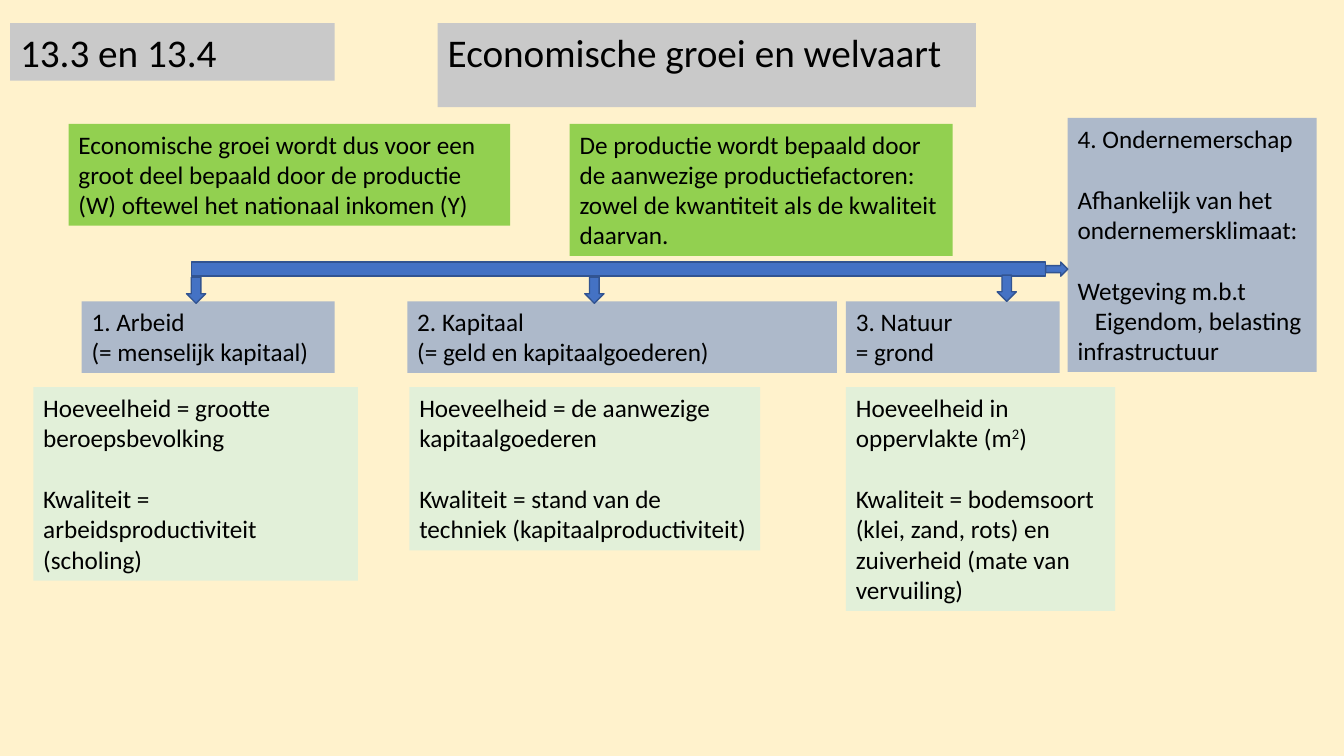
from pptx import Presentation
from pptx import util as u
from pptx.dml.color import RGBColor
from pptx.enum import shapes, text

BODY_SIZE, HEADING_SIZE = 18, 28
LINE_GAP = u.Pt(22)
INDENT = u.Inches(0.17)
GREY, GREEN, BLUE_GREY, PALE_GREEN = "C9C9C9", "92D050", "ADB9CA", "E2F0D9"
ARROW_FILL, ARROW_LINE = "4472C4", "325491"

# Each text is a list of groups of lines, with one line of space between groups.
# A leading tab indents a line; text between carets is superscript.
STATEMENTS = [
    ((0.68, 1.23, 4.38, 1.01),
     [["Economische groei wordt dus voor een groot deel bepaald door de "
       "productie (W) oftewel het nationaal inkomen (Y)"]]),
    ((5.65, 1.23, 3.8, 1.31),
     [["De productie wordt bepaald door de aanwezige productiefactoren: "
       "zowel de kwantiteit als de kwaliteit daarvan."]]),
]
# Factor: left and width of its name, the name, left, width and height of its detail, the detail
FACTORS = [
    ((0.81, 2.51), ["1. Arbeid", "(= menselijk kapitaal)"],
     (0.33, 3.22, 1.92),
     [["Hoeveelheid = grootte beroepsbevolking"],
      ["Kwaliteit = arbeidsproductiviteit", "(scholing)"]]),
    ((4.04, 4.26), ["2. Kapitaal", "(= geld en kapitaalgoederen)"],
     (4.06, 3.48, 1.62),
     [["Hoeveelheid = de aanwezige kapitaalgoederen"],
      ["Kwaliteit = stand van de techniek (kapitaalproductiviteit)"]]),
    ((8.39, 2.12), ["3. Natuur", "= grond"],
     (8.39, 2.67, 2.22),
     [["Hoeveelheid in oppervlakte (m^2^)"],
      ["Kwaliteit = bodemsoort (klei, zand, rots) en zuiverheid (mate van vervuiling)"]]),
]
ENTREPRENEURSHIP = [
    ["4. Ondernemerschap"],
    ["Afhankelijk van het ondernemersklimaat:"],
    ["Wetgeving m.b.t", "\tEigendom, belasting", "infrastructuur"],
]


def rgb(hex_string):
    return RGBColor.from_string(hex_string)


def paint(shape, color):
    shape.fill.solid()
    shape.fill.fore_color.rgb = rgb(color)


def apply_format(target, values):
    for name, value in values.items():
        setattr(target, name, value)


def write_line(paragraph, line, size):
    if line.startswith("\t"):
        paragraph._p.get_or_add_pPr().set("marL", str(INDENT))
    for index, part in enumerate(line.strip().split("^")):
        run = paragraph.add_run()
        run.text = part
        apply_format(run.font, {"name": "Calibri", "size": u.Pt(size)})
        run.font.color.rgb = rgb("000000")
        if index % 2:
            run._r.get_or_add_rPr().set("baseline", "30000")


def fill_panel(panel, box, groups, color, size=BODY_SIZE):
    """Place a text shape in box, colour it and write its groups of lines."""
    apply_format(panel, dict(zip(("left", "top", "width", "height"), map(u.Inches, box))))
    paint(panel, color)
    frame = panel.text_frame
    apply_format(frame, {
        "word_wrap": True,
        "auto_size": text.MSO_AUTO_SIZE.SHAPE_TO_FIT_TEXT,
        "vertical_anchor": text.MSO_ANCHOR.TOP,
    })
    paragraph = None
    for group_index, group in enumerate(groups):
        for line_index, line in enumerate(group):
            paragraph = frame.add_paragraph() if paragraph else frame.paragraphs[0]
            starts_group = group_index > 0 and line_index == 0
            apply_format(paragraph, {
                "alignment": text.PP_ALIGN.LEFT,
                "space_before": LINE_GAP if starts_group else u.Pt(0),
            })
            write_line(paragraph, line, size)


def add_panel(slide, box, groups, color, size=BODY_SIZE):
    panel = slide.shapes.add_textbox(*map(u.Inches, box))
    fill_panel(panel, box, groups, color, size)


def add_heading(slide, top, height):
    fill_panel(slide.shapes.title, (4.34, top, 5.34, height),
               [["Economische groei en welvaart"]], GREY, HEADING_SIZE)
    add_panel(slide, (0.1, top, 3.22, height), [["13.3 en 13.4"]], GREY, HEADING_SIZE)


def add_factors(slide, name_top, detail_top):
    for (left, width), name, (detail_left, detail_width, height), detail in FACTORS:
        add_panel(slide, (left, name_top, width, 0.71), [name], BLUE_GREY)
        add_panel(slide, (detail_left, detail_top, detail_width, height), detail, PALE_GREEN)


def add_branches(slide, left, top, width, thickness):
    """Draw the bar with its arrows down to three factors and right to the fourth."""
    kinds = shapes.MSO_SHAPE
    parts = [(kinds.RECTANGLE, (left, top, width, thickness))]
    for offset, drop in ((-0.05, 0.15), (3.9, 0.15), (7.99, 0.13)):
        parts.append((kinds.DOWN_ARROW, (left + offset, top + drop, 0.19, 0.26)))
    parts.append((kinds.RIGHT_ARROW, (left + width, top, 0.22, thickness)))
    for kind, box in parts:
        branch = slide.shapes.add_shape(kind, *map(u.Inches, box))
        branch.shadow.inherit = False
        paint(branch, ARROW_FILL)
        branch.line.color.rgb = rgb(ARROW_LINE)
        branch.line.width = u.Pt(1)


def main():
    deck = Presentation()
    apply_format(deck, {"slide_width": u.Inches(13.33), "slide_height": u.Inches(7.5)})
    slide = deck.slides.add_slide(deck.slide_layouts[5])
    paint(slide.background, "FFF2CC")
    add_heading(slide, 0.23, 0.57)
    for box, groups in STATEMENTS:
        add_panel(slide, box, groups, GREEN)
    add_factors(slide, 2.99, 3.84)
    add_panel(slide, (10.59, 1.17, 2.47, 2.52), ENTREPRENEURSHIP, BLUE_GREY)
    add_branches(slide, 1.9, 2.6, 8.47, 0.14)
    deck.save("out.pptx")


if __name__ == "__main__":
    main()
